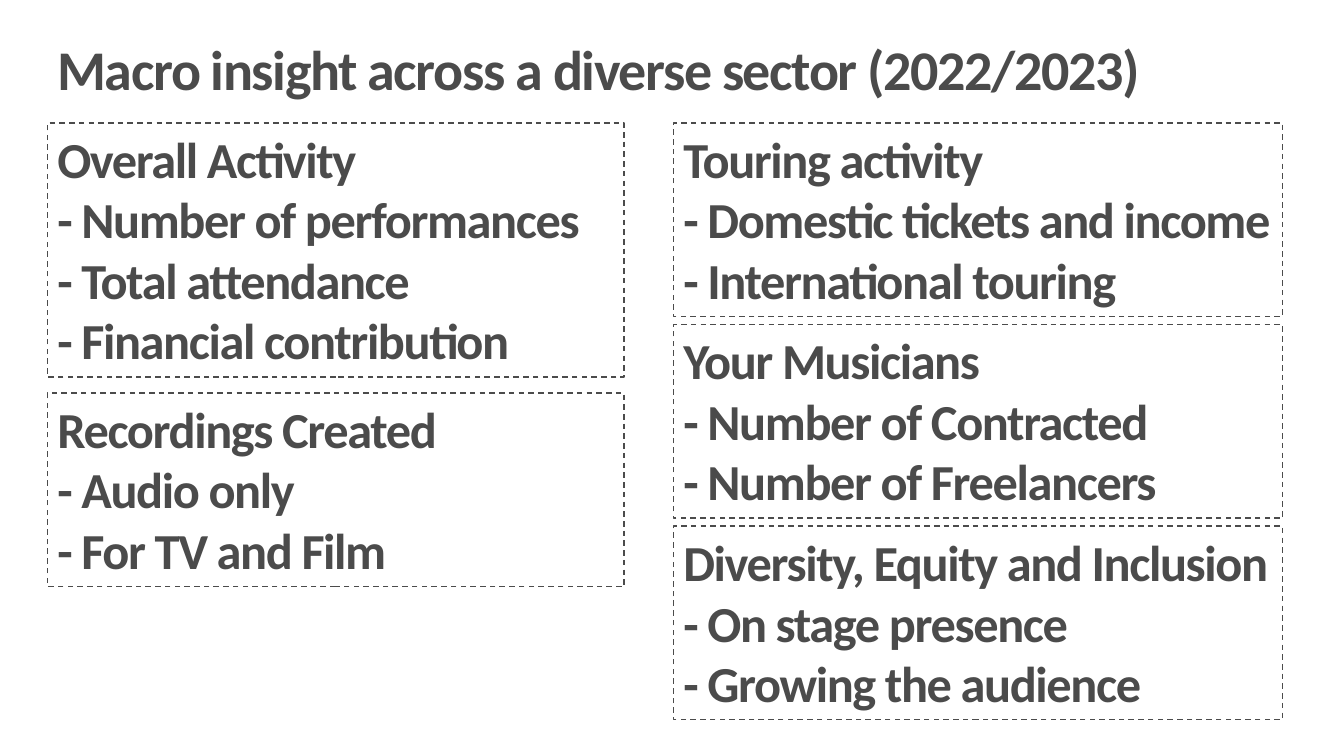
import pptx
import pptx.dml.color
import pptx.enum.dml
import pptx.enum.shapes
import pptx.enum.text
import pptx.util

Inches = pptx.util.Inches
Pt = pptx.util.Pt
TEXT = pptx.enum.text

COLORS = {"ink": "4B4B4B"}
INK = pptx.dml.color.RGBColor.from_string(COLORS["ink"])
FONT = {"name": "Calibri", "bold": True}
FRAME = {
    "word_wrap": True,
    "auto_size": TEXT.MSO_AUTO_SIZE.SHAPE_TO_FIT_TEXT,
    "vertical_anchor": TEXT.MSO_ANCHOR.TOP,
}

TITLE = "Macro insight across a diverse sector (2022/2023)"
TOP, LINE_HEIGHT, PADDING = 1.22, 0.6, 0.12
# Each column: left, width, gap between panels, panels
COLUMNS = [
    (0.47, 5.72, 0.16, [
        ["Overall Activity", "Number of performances", "Total attendance",
         "Financial contribution"],
        ["Recordings Created", "Audio only", "For TV and Film"],
    ]),
    (6.68, 6.04, 0.08, [
        ["Touring activity", "Domestic tickets and income", "International touring"],
        ["Your Musicians", "Number of Contracted", "Number of Freelancers"],
        ["Diversity, Equity and Inclusion", "On stage presence", "Growing the audience"],
    ]),
]


def write_lines(tf, lines, size):
    for name, value in FRAME.items():
        setattr(tf, name, value)
    for i, line in enumerate(lines):
        p = tf.paragraphs[0] if i == 0 else tf.add_paragraph()
        p.alignment = TEXT.PP_ALIGN.LEFT
        r = p.add_run()
        r.text = line
        for name, value in {**FONT, "size": Pt(size)}.items():
            setattr(r.font, name, value)
        r.font.color.rgb = INK
        # Letter spacing of -1 pt
        r._r.get_or_add_rPr().set("spc", "-100")


def add_title(slide, left, top, width, height):
    sp = slide.shapes.title
    box = {"left": left, "top": top, "width": width, "height": height}
    for name, value in box.items():
        setattr(sp, name, Inches(value))
    write_lines(sp.text_frame, [TITLE], 40)


def add_panel(slide, left, top, width, height, heading, items):
    sp = slide.shapes.add_shape(
        pptx.enum.shapes.MSO_SHAPE.RECTANGLE,
        Inches(left), Inches(top), Inches(width), Inches(height))
    sp.shadow.inherit = False
    sp.fill.background()
    sp.line.color.rgb = INK
    sp.line.width = Pt(1)
    sp.line.dash_style = pptx.enum.dml.MSO_LINE.DASH
    write_lines(sp.text_frame, [heading] + [f"- {item}" for item in items], 36)


def add_column(slide, left, top, width, gap, panels):
    for heading, *items in panels:
        height = PADDING + LINE_HEIGHT * (1 + len(items))
        add_panel(slide, left, top, width, height, heading, items)
        top += height + gap


def main():
    prs = pptx.Presentation()
    prs.slide_width, prs.slide_height = Inches(13.33), Inches(7.5)
    slide = prs.slides.add_slide(prs.slide_layouts[5])

    # Title
    add_title(slide, 0.47, 0.29, 12.41, 0.77)

    # Two columns of dashed panels
    for left, width, gap, panels in COLUMNS:
        add_column(slide, left, TOP, width, gap, panels)

    prs.save("out.pptx")


if __name__ == "__main__":
    main()
